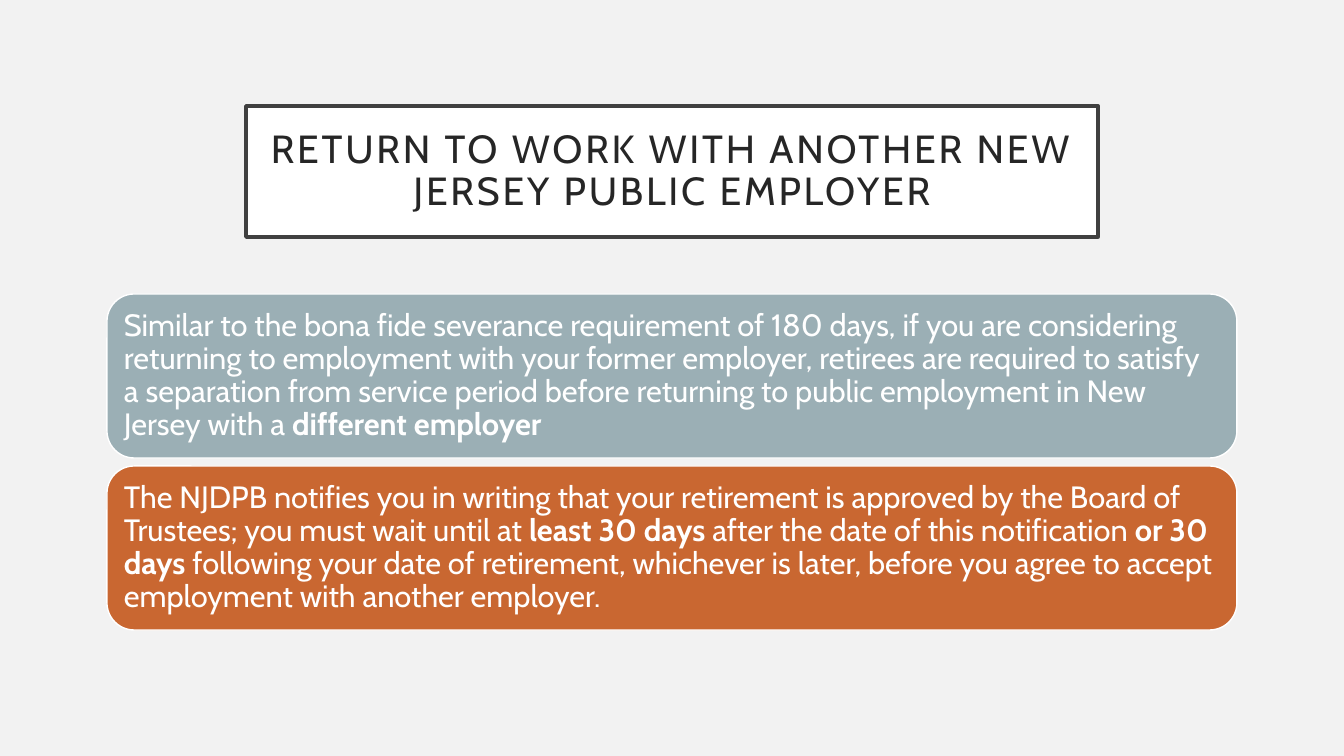
from pptx import Presentation
from pptx.dml.color import RGBColor
from pptx.enum.shapes import MSO_SHAPE
from pptx.enum.text import MSO_ANCHOR, PP_ALIGN
from pptx.util import Emu, Pt

EMU_PER_PX = 914400 / 100.8
FONT = "Cabin"
BACKGROUND = RGBColor(0xF2, 0xF2, 0xF2)
WHITE = RGBColor(0xFF, 0xFF, 0xFF)
FRAME = RGBColor(0x40, 0x40, 0x40)
INK = RGBColor(0x26, 0x26, 0x26)
SAGE = RGBColor(0x9B, 0xAF, 0xB5)
RUST = RGBColor(0xC9, 0x67, 0x31)

TITLE = "RETURN TO WORK WITH ANOTHER NEW JERSEY PUBLIC EMPLOYER"
RULES = [
    (SAGE, [
        ("Similar to the bona fide severance requirement of 180 days, if you are "
         "considering returning to employment with your former employer, retirees "
         "are required to satisfy a separation from service period before returning "
         "to public employment in New Jersey with a ", False),
        ("different employer", True),
    ]),
    (RUST, [
        ("The NJDPB notifies you in writing that your retirement is approved by the "
         "Board of Trustees; you must wait until at ", False),
        ("least 30 days ", True),
        ("after the date of this notification ", False),
        ("or 30 days ", True),
        ("following your date of retirement, whichever is later, before you agree "
         "to accept employment with another employer.", False),
    ]),
]


def px(length):
    return Emu(round(length * EMU_PER_PX))


def add_panel(slide, kind, box, fill, border, border_width, inset):
    panel = slide.shapes.add_shape(kind, *map(px, box))
    panel.shadow.inherit = False
    panel.fill.solid()
    panel.fill.fore_color.rgb = fill
    panel.line.color.rgb = border
    panel.line.width = Pt(border_width)
    frame = panel.text_frame
    frame.word_wrap = True
    frame.vertical_anchor = MSO_ANCHOR.MIDDLE
    frame.margin_left = frame.margin_right = px(inset)
    frame.margin_top = frame.margin_bottom = px(inset)
    return frame.paragraphs[0]


def style_paragraph(paragraph, size, color, alignment):
    paragraph.alignment = alignment
    paragraph.line_spacing = 0.9
    paragraph.font.name = FONT
    paragraph.font.size = Pt(size)
    paragraph.font.color.rgb = color


def add_title(slide, box):
    heading = add_panel(slide, MSO_SHAPE.RECTANGLE, box, WHITE, FRAME, 2.5, 20)
    style_paragraph(heading, 28, INK, PP_ALIGN.CENTER)
    run = heading.add_run()
    run.text = TITLE
    run.font._element.set("spc", "200")


def add_rules(slide, box, gap):
    left, top, width, height = box
    card_height = (height - gap * (len(RULES) - 1)) // len(RULES)
    for index, (fill, phrases) in enumerate(RULES):
        card = (left, top + index * (card_height + gap), width, card_height)
        rule = add_panel(slide, MSO_SHAPE.ROUNDED_RECTANGLE, card, fill, WHITE, 1, 9)
        style_paragraph(rule, 22, WHITE, PP_ALIGN.LEFT)
        for phrase, bold in phrases:
            run = rule.add_run()
            run.text = phrase
            run.font.bold = bold


def main():
    presentation = Presentation()
    presentation.slide_width = px(1344)
    presentation.slide_height = px(756)
    slide = presentation.slides.add_slide(presentation.slide_layouts[6])
    slide.background.fill.solid()
    slide.background.fill.fore_color.rgb = BACKGROUND
    add_title(slide, (246, 106, 852, 131))
    add_rules(slide, (107, 294, 1130, 336), 8)
    presentation.save("out.pptx")


if __name__ == "__main__":
    main()
